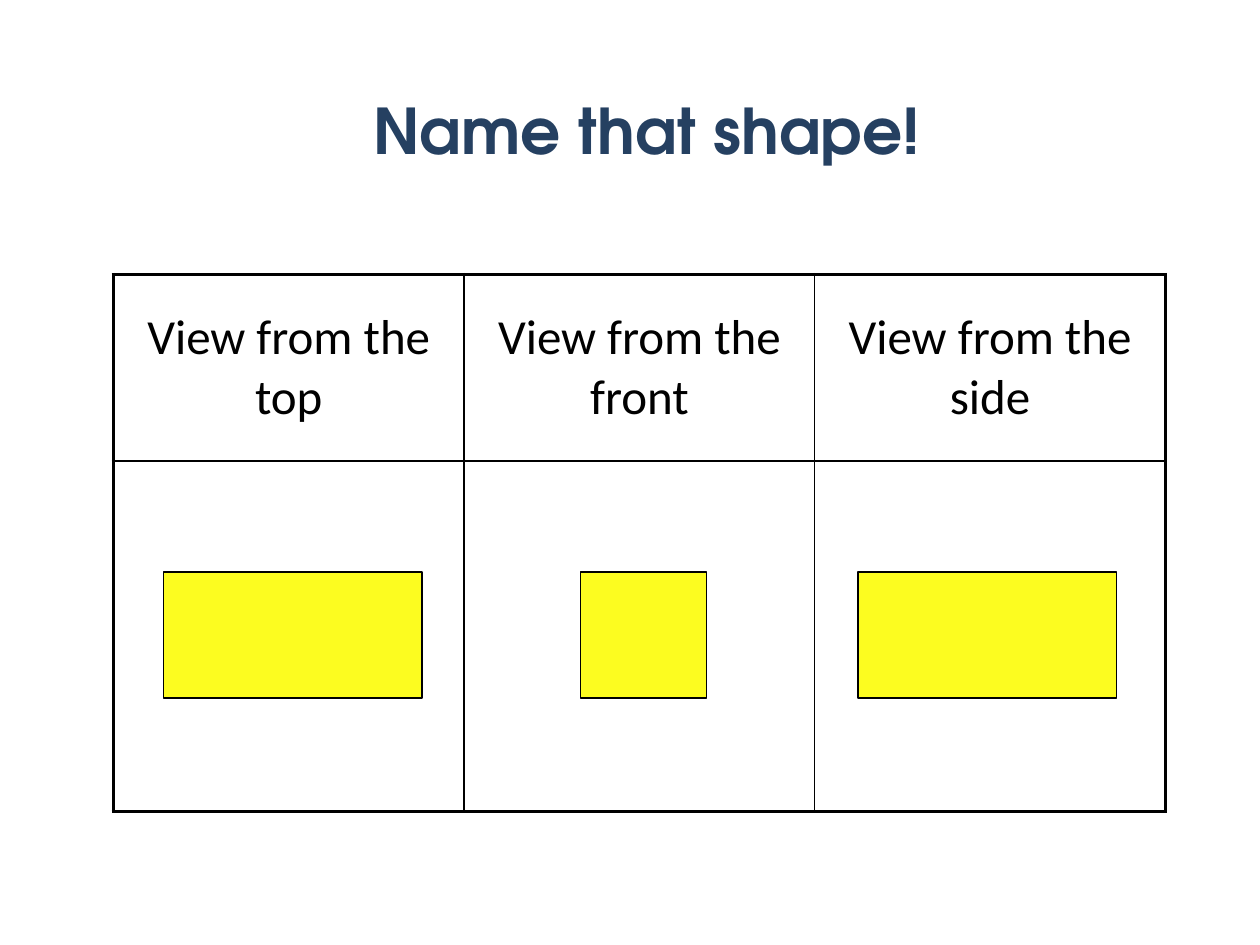
from pptx import Presentation
from pptx import util as u
from pptx.dml.color import RGBColor
from pptx.enum import shapes, text
from pptx.oxml.ns import qn
from lxml import etree

BLACK = RGBColor(0x00, 0x00, 0x00)
NAVY = RGBColor(0x25, 0x40, 0x61)
YELLOW = RGBColor(0xFC, 0xFC, 0x20)
THICK, THIN = u.Pt(2.25), u.Pt(1)
VIEWS = [("View from the top", 1.3, 2.05),
         ("View from the front", 4.61, 1),
         ("View from the side", 6.81, 2.05)]


def add_title(page, left, top, width, height):
    """Place the heading in the title placeholder."""
    title = page.shapes.title
    title.left, title.top, title.width, title.height = map(u.Inches, (left, top, width, height))
    frame = title.text_frame
    frame.text = "Name that shape!"
    frame.word_wrap = False
    frame.auto_size = text.MSO_AUTO_SIZE.NONE
    frame.vertical_anchor = text.MSO_ANCHOR.TOP
    para = frame.paragraphs[0]
    para.alignment = text.PP_ALIGN.CENTER
    para.font.name = "TeX Gyre Adventor"
    para.font.size = u.Pt(36)
    para.font.bold = True
    para.font.color.rgb = NAVY


def set_borders(cell, widths):
    """Draw solid black cell borders with the given width for each side."""
    properties = cell._tc.get_or_add_tcPr()
    for side, width in widths.items():
        line = etree.SubElement(properties, qn(f"a:ln{side}"), w=str(int(width)))
        fill = etree.SubElement(line, qn("a:solidFill"))
        etree.SubElement(fill, qn("a:srgbClr"), val=str(BLACK))


def add_view_table(page, left, top, width, row_heights):
    """Build the grid with a heading above an empty cell for each view."""
    frame = page.shapes.add_table(len(row_heights), len(VIEWS), u.Inches(left), u.Inches(top),
                                  u.Inches(width), u.Inches(sum(row_heights)))
    table = frame.table
    table.first_row = table.horz_banding = False
    last_row, last_column = len(row_heights) - 1, len(VIEWS) - 1
    for row, height in enumerate(row_heights):
        table.rows[row].height = u.Inches(height)
        for column in range(len(VIEWS)):
            cell = table.cell(row, column)
            set_borders(cell, {"L": THICK if column == 0 else THIN,
                               "R": THICK if column == last_column else THIN,
                               "T": THICK if row == 0 else THIN,
                               "B": THICK if row == last_row else THIN})
            cell.fill.background()
    for column, (label, *_) in enumerate(VIEWS):
        cell = table.cell(0, column)
        cell.vertical_anchor = text.MSO_ANCHOR.MIDDLE
        cell.text = label
        para = cell.text_frame.paragraphs[0]
        para.alignment = text.PP_ALIGN.CENTER
        para.font.name = "Calibri"
        para.font.size = u.Pt(28)
        para.font.color.rgb = BLACK


def add_view_faces(page, top, height):
    """Draw the yellow face that each view shows."""
    for _, left, width in VIEWS:
        face = page.shapes.add_shape(shapes.MSO_SHAPE.RECTANGLE, u.Inches(left), u.Inches(top),
                                     u.Inches(width), u.Inches(height))
        face.shadow.inherit = False
        face.fill.solid()
        face.fill.fore_color.rgb = YELLOW
        face.line.color.rgb = BLACK
        face.line.width = u.Pt(0.75)


def main():
    """Build and save the one-slide deck."""
    deck = Presentation()
    deck.slide_width, deck.slide_height = u.Inches(10), u.Inches(7.5)
    page = deck.slides.add_slide(deck.slide_layouts.get_by_name("Title Only"))
    add_view_table(page, 0.9, 2.18, 8.35, [1.48, 2.78])
    add_view_faces(page, 4.54, 1)
    add_title(page, 2.38, 0.68, 5.51, 0.71)
    deck.save("out.pptx")


if __name__ == "__main__":
    main()
